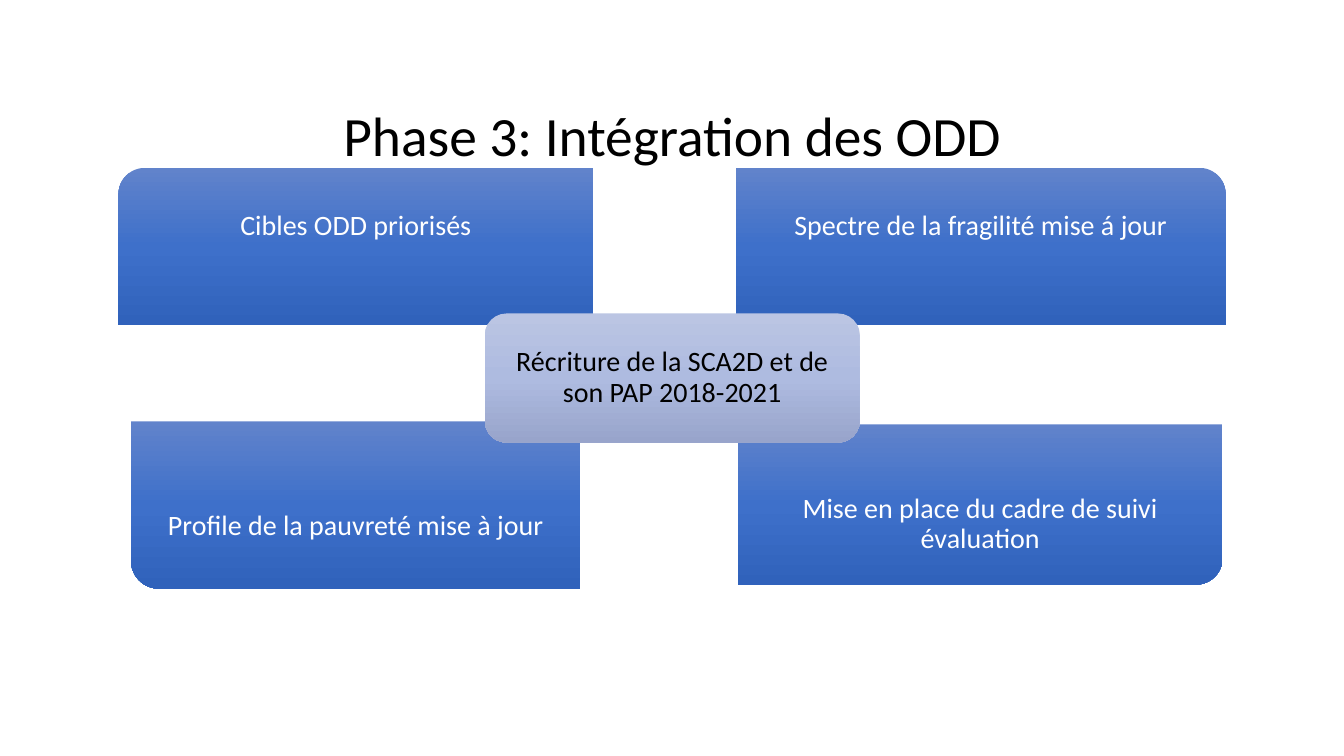
from lxml import etree
from pptx import Presentation
from pptx.dml.color import RGBColor
from pptx.enum import shapes, text
from pptx.oxml import ns
from pptx.util import Pt

BLACK = RGBColor(0x00, 0x00, 0x00)
WHITE = RGBColor(0xFF, 0xFF, 0xFF)
BLUES = [RGBColor(0x61, 0x83, 0xCB), RGBColor(0x3E, 0x70, 0xCA), RGBColor(0x30, 0x62, 0xBB)]
LILACS = [RGBColor(0xBB, 0xC5, 0xE3), RGBColor(0xAE, 0xBB, 0xE0), RGBColor(0x98, 0xA4, 0xCB)]
FONT = "Calibri"

QUADRANTS = [
    ("Cibles ODD priorisés", (84.6, 119.9, 339.1, 112.3), 270),
    ("Spectre de la fragilité mise á jour", (525.6, 119.9, 349.9, 112.3), 0),
    ("Profile de la pauvreté mise à jour", (93.6, 301, 321.1, 119.5), 180),
    ("Mise en place du cadre de suivi évaluation", (527, 303.1, 346.3, 114.5), 90),
]


def fill_gradient(sp, colors):
    sp.fill.gradient()
    grad = sp._element.spPr.find(ns.qn("a:gradFill"))
    grad.set("rotWithShape", "0")
    stops = grad.find(ns.qn("a:gsLst"))
    for stop in list(stops):
        stops.remove(stop)
    for i, color in enumerate(colors):
        stop = etree.SubElement(stops, ns.qn("a:gs"), pos=str(i * 50000))
        etree.SubElement(stop, ns.qn("a:srgbClr"), val=str(color))
    lin = grad.find(ns.qn("a:lin"))
    lin.set("ang", "5400000")
    lin.set("scaled", "0")


def add_panel(s, kind, box, colors, rotation=0):
    x, y, w, h = box
    if rotation in (90, 270):
        x, y, w, h = x + (w - h) / 2, y + (h - w) / 2, h, w
    sp = s.shapes.add_shape(kind, Pt(x), Pt(y), Pt(w), Pt(h))
    sp.rotation = rotation
    sp.shadow.inherit = False
    sp.line.fill.background()
    fill_gradient(sp, colors)
    return sp


def add_label(s, box, words, size, color, inset):
    sp = s.shapes.add_textbox(*map(Pt, box))
    tf = sp.text_frame
    tf.word_wrap = True
    tf.vertical_anchor = text.MSO_ANCHOR.MIDDLE
    tf.margin_left = tf.margin_right = tf.margin_top = tf.margin_bottom = Pt(inset)
    tf.text = words
    p = tf.paragraphs[0]
    p.alignment = text.PP_ALIGN.CENTER
    p.line_spacing = 0.9
    font = p.runs[0].font
    font.name, font.size, font.color.rgb = FONT, Pt(size), color


def add_quadrant(s, box, words, rotation):
    x, y, w, h = box
    add_panel(s, shapes.MSO_SHAPE.ROUND_1_RECTANGLE, box, BLUES, rotation)
    label_top = y + h / 4 if rotation in (90, 180) else y
    add_label(s, (x, label_top, w, h * 0.75), words, 20, WHITE, 11.2)


def add_center(s, box, words):
    x, y, w, h = box
    add_panel(s, shapes.MSO_SHAPE.ROUNDED_RECTANGLE, box, LILACS)
    add_label(s, (x + 4.5, y + 4.5, w - 9, h - 9), words, 20, BLACK, 6)


def main():
    prs = Presentation()
    prs.slide_width, prs.slide_height = Pt(960), Pt(540)
    s = prs.slides.add_slide(prs.slide_layouts[6])
    add_label(s, (46, 74.9, 868.3, 47.5), "Phase 3: Intégration des ODD", 39.6, BLACK, 3.6)
    for words, box, rotation in QUADRANTS:
        add_quadrant(s, box, words, rotation)
    add_center(s, (346.3, 223.9, 267.8, 92.2), "Récriture de la SCA2D et de son PAP 2018-2021")
    prs.save("out.pptx")


if __name__ == "__main__":
    main()
